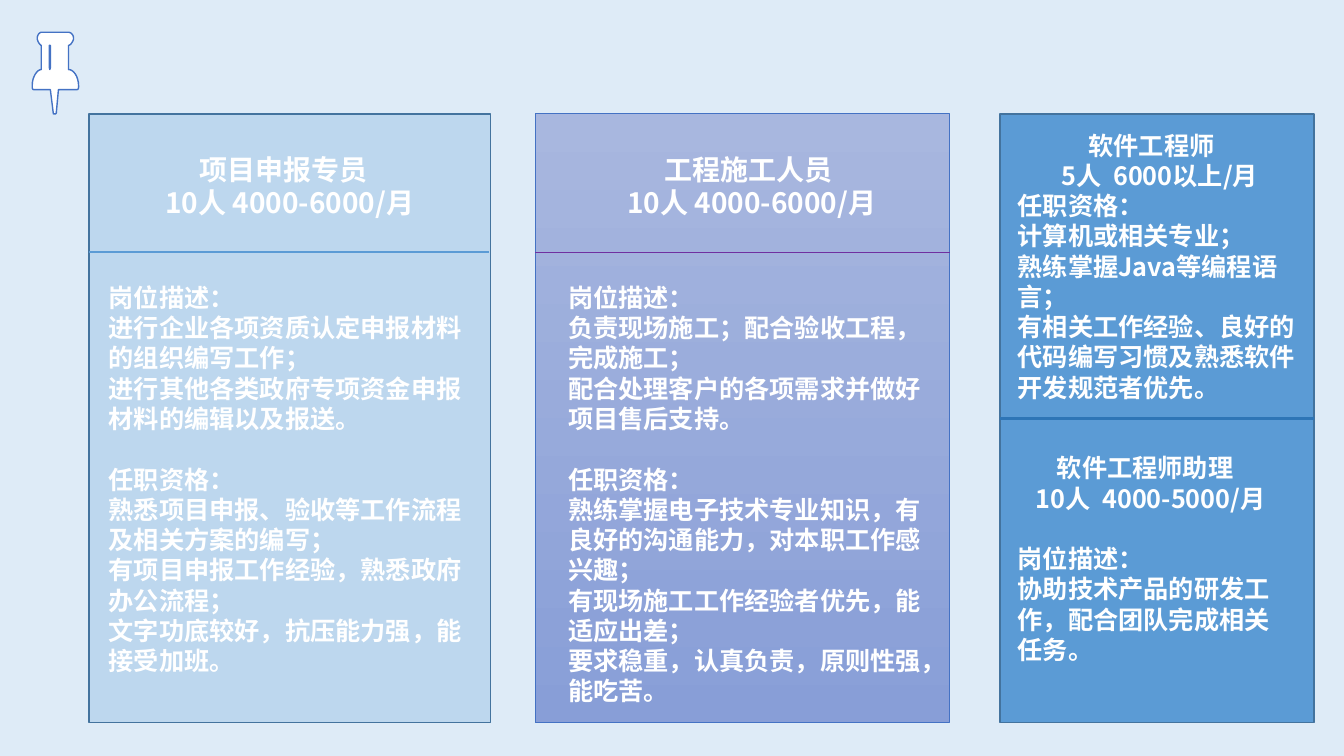
import pptx
import pptx.dml.color
import pptx.enum.shapes
import pptx.enum.text
import pptx.oxml.ns
import pptx.util
import lxml.etree
from dataclasses import dataclass

Cm = pptx.util.Cm
Pt = pptx.util.Pt


@dataclass(frozen=True)
class Theme:
    font: str = "Noto Sans CJK SC"
    page: str = "DEEBF7"
    text: str = "FFFFFF"
    accent: str = "4472C4"
    edge: str = "43739E"
    heading: int = 20
    body: int = 18
    blank_line: float = 21.7


theme = Theme()

CARD_TOP, CARD_HEIGHT = 2.87, 15.34
CARDS = [
    {"left": 2.24, "width": 10.13, "fill": ["BDD7EE"], "edge": (theme.edge, 1),
     "rule": (6.35, 10.08, "5B9BD5", 1.75)},
    {"left": 13.49, "width": 10.44, "fill": ["A8B7DF", "889ED7"], "edge": (theme.accent, 0.5),
     "rule": (6.35, 10.44, "7030A0", 0.5)},
    {"left": 25.2, "width": 7.92, "fill": ["5B9BD5"], "edge": (theme.edge, 1),
     "rule": (10.54, 7.92, "2E75B6", 2)},
]

TEXTS = [
    {"at": (2.49, 3.71, 9.63, 1.96), "size": theme.heading,
     "heading": [("项目申报专员", 0, 0.32), ("10人 4000-6000/月", 0, 0)]},
    {"at": (2.49, 6.99, 9.58, 10.26), "size": theme.body,
     "sections": [
         ["岗位描述：",
          "进行企业各项资质认定申报材料的组织编写工作；",
          "进行其他各类政府专项资金申报材料的编辑以及报送。"],
         ["任职资格：",
          "熟悉项目申报、验收等工作流程及相关方案的编写；",
          "有项目申报工作经验，熟悉政府办公流程；",
          "文字功底较好，抗压能力强，能接受加班。"]]},
    {"at": (14.5, 3.71, 8.89, 1.96), "size": theme.heading,
     "heading": [("工程施工人员", 0, 0.16), ("10人 4000-6000/月", 0, 0)]},
    {"at": (14.07, 6.99, 9.86, 11.02), "size": theme.body,
     "sections": [
         ["岗位描述：",
          "负责现场施工；配合验收工程，完成施工；",
          "配合处理客户的各项需求并做好项目售后支持。"],
         ["任职资格：",
          "熟练掌握电子技术专业知识，有良好的沟通能力，对本职工作感兴趣；",
          "有现场施工工作经验者优先，能适应出差；",
          "要求稳重，认真负责，原则性强，能吃苦。"]]},
    {"at": (25.4, 3.15, 7.52, 7.19), "size": theme.body,
     "heading": [("软件工程师", 0, 0.28), ("5人  6000以上/月", 0.14, 0)],
     "sections": [
         ["任职资格：",
          "计算机或相关专业；",
          "熟练掌握Java等编程语言；",
          "有相关工作经验、良好的代码编写习惯及熟悉软件开发规范者优先。"]]},
    {"at": (25.4, 11.28, 7.06, 5.64), "size": theme.body, "gap_after_heading": True,
     "heading": [("软件工程师助理", 0, 0.14), ("10人  4000-5000/月", 0.14, 0)],
     "sections": [
         ["岗位描述：",
          "协助技术产品的研发工作，配合团队完成相关任务。"]]},
]

PIN_UNIT = 0.00254
PIN_OUTLINE = [
    [(760, 890)], [(580, 890)], [(560, 1110)],
    [(560, 1130), (550, 1130), (550, 1130)], [(530, 1130)], [(500, 890)], [(340, 890)],
    [(320, 890), (320, 870), (320, 850)], [(320, 760), (370, 690), (410, 690)],
    [(410, 450)], [(400, 450), (370, 410), (370, 380)],
    [(370, 340), (400, 320), (410, 320)], [(680, 320)],
    [(700, 320), (730, 340), (730, 380)], [(730, 410), (700, 450), (680, 450)],
    [(680, 690)], [(730, 690), (780, 760), (780, 850)],
    [(780, 870), (780, 890), (760, 890)],
]
PIN_SLOT = [(500, 450), (490, 450), (490, 670), (495, 690), (500, 670)]


def color(code):
    return pptx.dml.color.RGBColor.from_string(code)


def flatten(segments, steps=8):
    points = []
    for segment in segments:
        if len(segment) == 1:
            points += segment
            continue
        controls = [points[-1], *segment]
        for step in range(1, steps + 1):
            t = step / steps
            weights = ((1 - t) ** 3, 3 * t * (1 - t) ** 2, 3 * t * t * (1 - t), t ** 3)
            points.append(tuple(sum(w * p[axis] for w, p in zip(weights, controls))
                                for axis in (0, 1)))
    return points


def style_shape(shape, fills, edge):
    shape.shadow.inherit = False
    if len(fills) == 1:
        shape.fill.solid()
        shape.fill.fore_color.rgb = color(fills[0])
    else:
        shape.fill.gradient()
        shape.fill.gradient_angle = 270
        for stop, code in zip(shape.fill.gradient_stops, fills):
            stop.color.rgb = color(code)
    style_line(shape.line, *edge)


def style_line(line, code, width):
    line.color.rgb = color(code)
    line.width = Pt(width)


def add_pin(page):
    outline = flatten(PIN_OUTLINE)
    builder = page.shapes.build_freeform(*outline[0], scale=Cm(1) * PIN_UNIT)
    builder.add_line_segments(outline[1:], close=True)
    builder.move_to(*PIN_SLOT[0])
    builder.add_line_segments(PIN_SLOT[1:], close=True)
    style_shape(builder.convert_to_shape(), [theme.text], (theme.accent, 1))


def add_card(page, card):
    left = card["left"]
    box = page.shapes.add_shape(pptx.enum.shapes.MSO_SHAPE.RECTANGLE, Cm(left), Cm(CARD_TOP),
                                Cm(card["width"]), Cm(CARD_HEIGHT))
    style_shape(box, card["fill"], card["edge"])
    top, length, code, width = card["rule"]
    rule = page.shapes.add_connector(pptx.enum.shapes.MSO_CONNECTOR.STRAIGHT,
                                     Cm(left), Cm(top), Cm(left + length), Cm(top))
    style_line(rule.line, code, width)
    lxml.etree.SubElement(rule._element.spPr, pptx.oxml.ns.qn("a:effectLst"))


def add_text(page, entry):
    box = page.shapes.add_textbox(*(Cm(value) for value in entry["at"]))
    frame = box.text_frame
    frame.word_wrap = True
    heading = entry.get("heading", [])
    lines = [(text, left, right, True, False) for text, left, right in heading]
    for number, section in enumerate(entry.get("sections", [])):
        for row, text in enumerate(section):
            gap = row == 0 and (number > 0 or entry.get("gap_after_heading", False))
            lines.append((text, 0, 0, False, gap))
    for index, (text, left, right, centred, gap) in enumerate(lines):
        para = frame.add_paragraph() if index else frame.paragraphs[0]
        para.text = text
        para.font.size = Pt(entry["size"])
        para.font.bold = True
        para.font.name = theme.font
        para.font.color.rgb = color(theme.text)
        for span in para.runs:
            properties = span.font._element
            for tag in ("a:latin", "a:ea"):
                lxml.etree.SubElement(properties, pptx.oxml.ns.qn(tag), typeface=theme.font)
        if centred:
            para.alignment = pptx.enum.text.PP_ALIGN.CENTER
            settings = para._p.get_or_add_pPr()
            settings.set("marL", str(Cm(left)))
            settings.set("marR", str(Cm(right)))
        if gap:
            para.space_before = Pt(theme.blank_line)


def main():
    deck = pptx.Presentation()
    deck.slide_width, deck.slide_height = Cm(33.87), Cm(19.05)
    page = deck.slides.add_slide(deck.slide_layouts[6])
    page.background.fill.solid()
    page.background.fill.fore_color.rgb = color(theme.page)
    add_pin(page)
    for card in CARDS:
        add_card(page, card)
    for entry in TEXTS:
        add_text(page, entry)
    deck.save("out.pptx")


if __name__ == "__main__":
    main()
